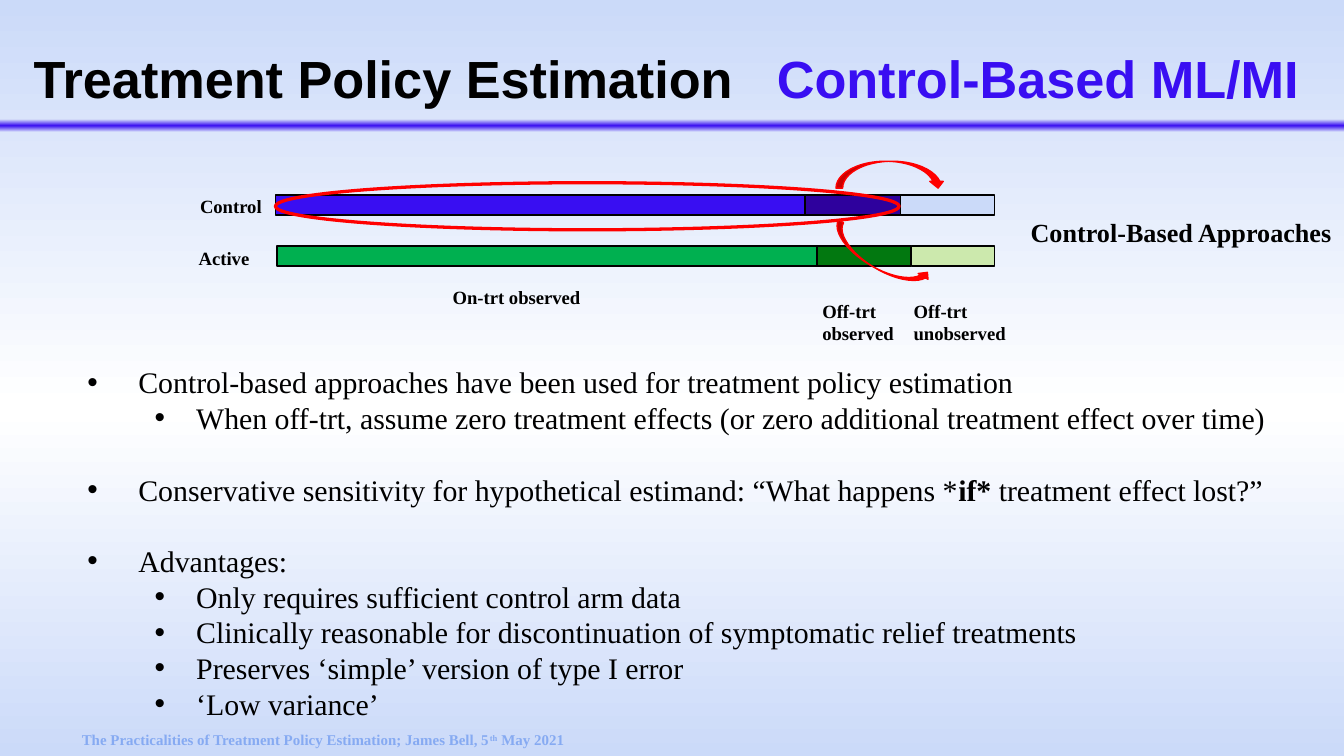
from lxml.etree import SubElement
from pptx import Presentation
from pptx.dml.color import RGBColor
from pptx.enum.shapes import MSO_SHAPE
from pptx.enum.text import MSO_ANCHOR, MSO_AUTO_SIZE, PP_ALIGN
from pptx.oxml.ns import qn
from pptx.util import Inches, Pt

BLUE, PALE, RED, BLACK = "390EF2", "CBDAF9", "FF0000", "000000"
SERIF = "Times New Roman"
color = RGBColor.from_string


def shade(node, stops, angle):
    """Set (percent, colour, alpha percent) stops on the gradient in node."""
    grad = node.find(".//" + qn("a:gradFill"))
    for child in list(grad):
        grad.remove(child)
    group = SubElement(grad, qn("a:gsLst"))
    for place, tint, alpha in stops:
        stop = SubElement(group, qn("a:gs"), pos=str(place * 1000))
        rgb = SubElement(stop, qn("a:srgbClr"), val=tint)
        if alpha < 100:
            SubElement(rgb, qn("a:alpha"), val=str(alpha * 1000))
    SubElement(grad, qn("a:lin"), ang=str(angle * 60000), scaled="0")


def write(para, parts, size, font=SERIF):
    """Add (text, colour, bold) runs to a paragraph."""
    for text, tint, bold in parts:
        run = para.add_run()
        run.text = text
        run.font.name, run.font.size, run.font.bold = font, Pt(size), bold
        run.font.color.rgb = color(tint)


prs = Presentation()
prs.slide_width = Inches(10)
prs.slide_height = Inches(10) * 9 // 16
slide = prs.slides.add_slide(prs.slide_layouts[1])
shapes = slide.shapes

# Background and the glowing rule under the title
slide.background.fill.gradient()
shade(slide.element, [(0, PALE, 100), (46, "FFFFFF", 100), (100, PALE, 100)], 270)
rule = shapes.add_shape(MSO_SHAPE.RECTANGLE, 0, Inches(0.89), Inches(10), Inches(0.09))
rule.shadow.inherit = False
rule.line.fill.background()
rule.fill.gradient()
shade(rule.element, [(0, BLUE, 0), (50, BLUE, 100), (100, BLUE, 0)], 90)

# Title, with a tab stop before its second part
title = shapes.title
title.left, title.top = Inches(0.15), Inches(0.23)
title.width, title.height = Inches(10.01), Inches(0.6)
frame = title.text_frame
frame.auto_size = MSO_AUTO_SIZE.NONE
frame.vertical_anchor = MSO_ANCHOR.MIDDLE
frame.margin_left = frame.margin_right = Inches(0.1)
frame.margin_top, frame.margin_bottom = Inches(0.12), Inches(0.03)
head = frame.paragraphs[0]
head.alignment = PP_ALIGN.LEFT
tabs = SubElement(head._p.get_or_add_pPr(), qn("a:tabLst"))
SubElement(tabs, qn("a:tab"), pos=str(Inches(5.53)), algn="l")
write(head, [("Treatment Policy Estimation\t", BLACK, True),
             ("Control-Based ML/MI", BLUE, True)], 28, "Arial")

# Bullet list: level, gap above, (text, bold) parts
items = [
    (0, False, [("Control-based approaches have been used for treatment policy estimation", False)]),
    (1, False, [("When off-trt, assume zero treatment effects "
                 "(or zero additional treatment effect over time)", False)]),
    (0, True, [("Conservative sensitivity for hypothetical estimand: “What happens *", False),
               ("if*", True), (" treatment effect lost?”", False)]),
    (0, True, [("Advantages:", False)]),
    (1, False, [("Only requires sufficient control arm data", False)]),
    (1, False, [("Clinically reasonable for discontinuation of symptomatic relief treatments", False)]),
    (1, False, [("Preserves ‘simple’ version of type I error", False)]),
    (1, False, [("‘Low variance’", False)]),
]
body = slide.placeholders[1]
body.left, body.top = Inches(0.55), Inches(2.66)
body.width, body.height = Inches(9.45), Inches(2.79)
frame = body.text_frame
frame.auto_size = MSO_AUTO_SIZE.NONE
pitch = Pt(19.15)
for i, (level, gap, parts) in enumerate(items):
    para = frame.add_paragraph() if i else frame.paragraphs[0]
    para.level = level
    para.line_spacing = pitch
    para.space_before = pitch if gap else Pt(0)
    left, hang = [(0.38, 0.38), (0.81, 0.31)][level]
    props = para._p.get_or_add_pPr()
    props.set("marL", str(Inches(left)))
    props.set("indent", str(-Inches(hang)))
    SubElement(props, qn("a:buFont"), typeface="Arial")
    SubElement(props, qn("a:buChar"), char="•")
    write(para, [(text, BLACK, bold) for text, bold in parts], 16)

# Arms: top, then the edges and fills of the three segments
arms = [
    (1.45, [2.05, 5.99, 6.7, 7.4], [BLUE, "2E019D", PALE]),
    (1.83, [2.06, 6.08, 6.78, 7.4], ["00B050", "027810", "CCE9AD"]),
]
marks = [(MSO_SHAPE.RECTANGLE, x, top, end - x, 0.15, 0, tint, BLACK, 0.75)
         for top, edges, tints in arms
         for x, end, tint in zip(edges, edges[1:], tints)]
marks += [
    (MSO_SHAPE.OVAL, 2.05, 1.36, 4.64, 0.35, 0, None, RED, 1.75),
    (MSO_SHAPE.CURVED_DOWN_ARROW, 6.22, 1.2, 0.81, 0.2, 0, RED, RED, 0.75),
    (MSO_SHAPE.CURVED_UP_ARROW, 6.14, 1.83, 0.81, 0.17, 30.6, RED, RED, 0.75),
]
for kind, x, y, w, h, turn, tint, edge, weight in marks:
    mark = shapes.add_shape(kind, Inches(x), Inches(y), Inches(w), Inches(h))
    mark.shadow.inherit = False
    mark.rotation = turn
    if tint:
        mark.fill.solid()
        mark.fill.fore_color.rgb = color(tint)
    else:
        mark.fill.background()
    mark.line.color.rgb = color(edge)
    mark.line.width = Pt(weight)

# Labels and footer: parts, place, size, colour, wrap
labels = [
    (["Control"], 1.39, 1.4, 0.67, 0.27, 10, BLACK, False),
    (["Active"], 1.38, 1.79, 0.59, 0.27, 10, BLACK, False),
    (["On-trt observed"], 3.27, 2.08, 1.17, 0.27, 10, BLACK, False),
    (["Off-trt observed"], 6.02, 2.18, 1.02, 0.44, 10, BLACK, True),
    (["Off-trt unobserved"], 6.7, 2.18, 1.27, 0.44, 10, BLACK, True),
    (["Control-Based Approaches"], 7.57, 1.56, 2.46, 0.34, 14, BLACK, False),
    (["The Practicalities of Treatment Policy Estimation; James Bell, 5", "th", " May 2021"],
     0.51, 5.39, 8.82, 0.23, 8, "86AAF2", True),
]
for parts, x, y, w, h, size, tint, wrap in labels:
    box = shapes.add_textbox(Inches(x), Inches(y), Inches(w), Inches(h))
    box.text_frame.word_wrap = wrap
    para = box.text_frame.paragraphs[0]
    write(para, [(text, tint, True) for text in parts], size)
    for run in para.runs:
        if run.text == "th":
            run._r.get_or_add_rPr().set("baseline", "30000")

prs.save("out.pptx")
